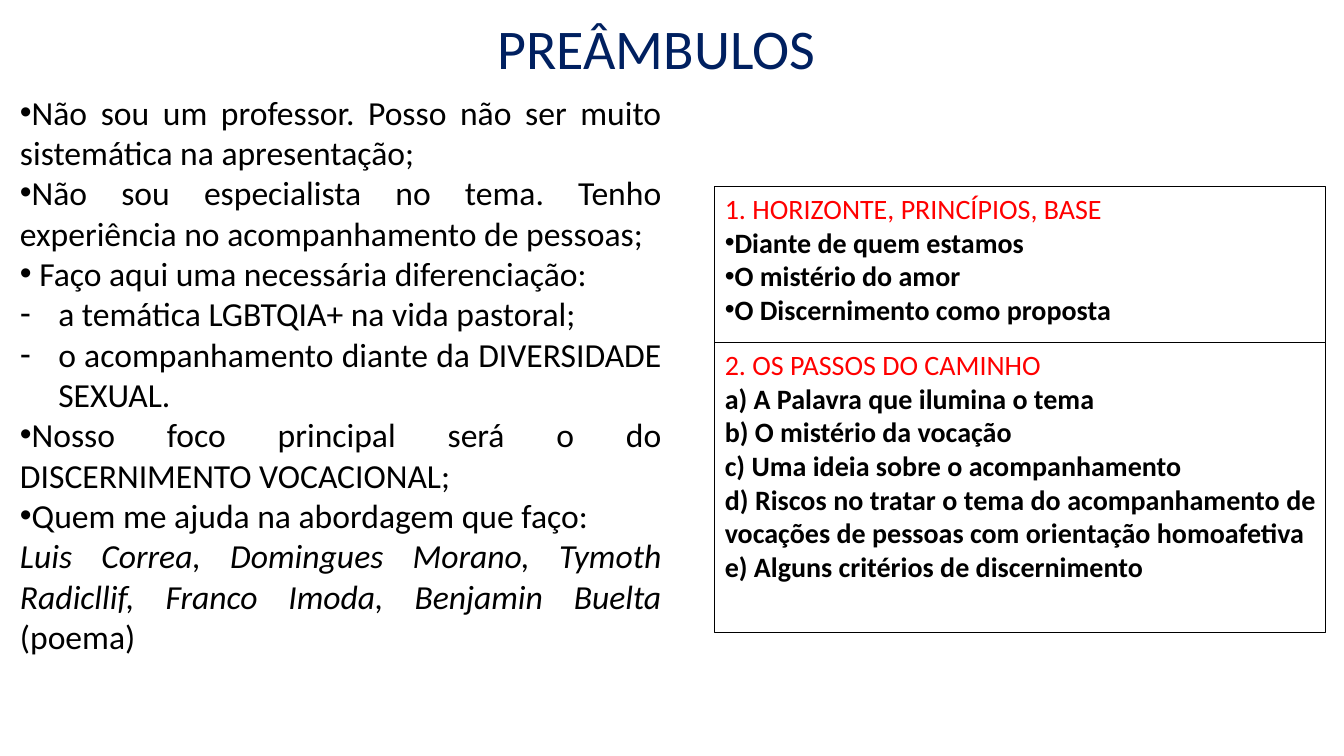
from lxml import etree
from pptx import Presentation
from pptx.dml.color import RGBColor
from pptx.enum.shapes import MSO_SHAPE
from pptx.enum.text import MSO_ANCHOR, PP_ALIGN
from pptx.oxml.ns import qn
from pptx.util import Inches, Pt

RECT = MSO_SHAPE.RECTANGLE
TOP, BOTTOM = MSO_ANCHOR.TOP, MSO_ANCHOR.BOTTOM
CENTER, JUSTIFY = PP_ALIGN.CENTER, PP_ALIGN.JUSTIFY
COLORS = {"navy": "002060", "black": "000000", "red": "FF0000", "white": "FFFFFF"}
HANGING = Inches(0.38)

REMARKS = [
    ("•", "Não sou um professor. Posso não ser muito sistemática na apresentação;"),
    ("•", "Não sou especialista no tema. Tenho experiência no acompanhamento de pessoas;"),
    ("•", " Faço aqui uma necessária diferenciação: "),
    ("-", "a temática LGBTQIA+ na vida pastoral; "),
    ("-", "o acompanhamento diante da DIVERSIDADE SEXUAL. "),
    ("•", "Nosso foco principal será o do DISCERNIMENTO VOCACIONAL; "),
    ("•", "Quem me ajuda na abordagem que faço: "),
]
HELPERS = "Luis Correa, Domingues Morano, Tymoth Radicllif, Franco Imoda, Benjamin Buelta "
SECTIONS = [
    (1.85, 1.57, "1. HORIZONTE, PRINCÍPIOS, BASE", "•", [
        "Diante de quem estamos",
        "O mistério do amor",
        "O Discernimento como proposta",
    ]),
    (3.4, 2.88, "2. OS PASSOS DO CAMINHO", None, [
        "a) A Palavra que ilumina o tema",
        "b) O mistério da vocação",
        "c) Uma ideia sobre o acompanhamento",
        "d) Riscos no tratar o tema do acompanhamento de vocações de pessoas "
        "com orientação homoafetiva",
        "e) Alguns critérios de discernimento",
    ]),
]


class SlideBuilder:
    """Adds consistently styled elements to one slide."""

    font = "Calibri"

    def __init__(self, prs):
        self.slide = prs.slides.add_slide(prs.slide_layouts[5])

    def color(self, name):
        return RGBColor.from_string(COLORS[name])

    def run(self, p, text, size, color="black", **fmt):
        r = p.add_run()
        r.text = text
        for key, value in {"name": self.font, "size": Pt(size), **fmt}.items():
            setattr(r.font, key, value)
        r.font.color.rgb = self.color(color)

    def paragraph(self, tf, runs, size, bullet=None, align=JUSTIFY):
        p = tf.paragraphs[0] if not tf.paragraphs[0].runs else tf.add_paragraph()
        p.alignment = align
        for text, fmt in runs:
            self.run(p, text, size, **fmt)
        if bullet:
            pPr = p._p.get_or_add_pPr()
            if bullet == "-":
                pPr.set("marL", str(HANGING))
                pPr.set("indent", str(-HANGING))
            etree.SubElement(pPr, qn("a:buFont")).set("typeface", "Arial")
            etree.SubElement(pPr, qn("a:buChar")).set("char", bullet)
        return p

    def title(self, text, box):
        sp = self.slide.shapes.title
        sp.left, sp.top, sp.width, sp.height = map(Inches, box)
        sp.text_frame.vertical_anchor = BOTTOM
        p = self.paragraph(sp.text_frame, [(text, {"color": "navy"})], 40, align=CENTER)
        p.line_spacing = 0.9

    def text_box(self, box):
        tf = self.slide.shapes.add_textbox(*map(Inches, box)).text_frame
        tf.word_wrap = True
        return tf

    def panel(self, box, heading, bullet, items):
        sp = self.slide.shapes.add_shape(RECT, *map(Inches, box))
        sp.shadow.inherit = False
        sp.fill.solid()
        sp.fill.fore_color.rgb = self.color("white")
        sp.line.color.rgb = self.color("black")
        sp.line.width = Pt(0.75)
        tf = sp.text_frame
        tf.word_wrap = True
        tf.vertical_anchor = TOP
        self.paragraph(tf, [(heading, {"color": "red"})], 20)
        for item in items:
            self.paragraph(tf, [(item, {"bold": True})], 20, bullet)


def main():
    prs = Presentation()
    prs.slide_width, prs.slide_height = Inches(13.33), Inches(7.5)
    s = SlideBuilder(prs)
    s.title("PREÂMBULOS", (0.44, -0.14, 12.14, 1))
    tf = s.text_box((0.1, 0.86, 6.56, 6.64))
    for bullet, text in REMARKS:
        s.paragraph(tf, [(text, {})], 24, bullet)
    s.paragraph(tf, [(HELPERS, {"italic": True}), ("(poema) ", {})], 24)
    for top, height, heading, bullet, items in SECTIONS:
        s.panel((7.09, top, 6.06, height), heading, bullet, items)
    prs.save("out.pptx")


if __name__ == "__main__":
    main()
